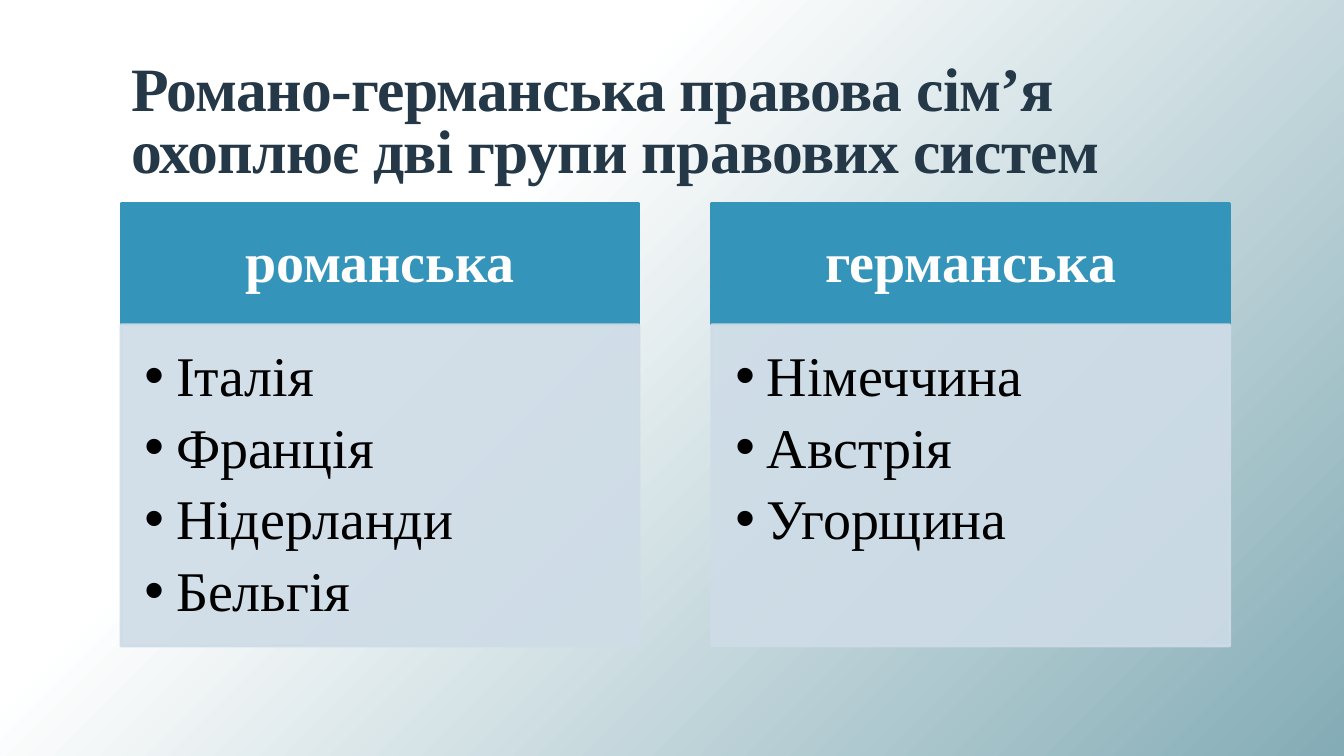
from lxml.etree import SubElement
from pptx import Presentation
from pptx.dml.color import RGBColor
from pptx.enum.text import MSO_ANCHOR, MSO_AUTO_SIZE, PP_ALIGN
from pptx.oxml.ns import qn
from pptx.util import Pt

WHITE = RGBColor(0xFF, 0xFF, 0xFF)
BLACK = RGBColor(0x00, 0x00, 0x00)
NAVY = RGBColor(0x25, 0x38, 0x48)
BLUE = RGBColor(0x34, 0x94, 0xBA)
PALE = RGBColor(0xCE, 0xDC, 0xE7)
TEAL = RGBColor(0x84, 0xAC, 0xB6)

LEFT, TOP, WIDTH, STEP = 86.4, 145.5, 370, 422
HEAD, BODY = 86.4, 229.6


def place(shape, box, pads, anchor):
    for name, value in zip(("left", "top", "width", "height"), box):
        setattr(shape, name, Pt(value))
    frame = shape.text_frame
    sides = ("margin_left", "margin_top", "margin_right", "margin_bottom")
    for name, value in zip(sides, pads):
        setattr(frame, name, Pt(value))
    frame.word_wrap = True
    frame.auto_size = MSO_AUTO_SIZE.NONE
    frame.vertical_anchor = anchor


def write(shape, lines, style, align, space, after):
    shape.text_frame.text = "\n".join(lines)
    for para in shape.text_frame.paragraphs:
        para.alignment = align
        para.line_spacing = space
        para.space_before = Pt(0)
        para.space_after = Pt(after)
        font = para.runs[0].font
        font.name = "Times New Roman"
        font.color.rgb = style["color"]
        for name in ("size", "bold"):
            setattr(font, name, style[name])


deck = Presentation()
deck.slide_width, deck.slide_height = Pt(960), Pt(540)
slide = deck.slides.add_slide(deck.slide_layouts.get_by_name("Comparison"))
slots = {slot.placeholder_format.idx: slot for slot in slide.placeholders}

# Background
back = slide.background.fill
back.gradient()
back.gradient_angle = 315
for stop, (spot, color) in zip(back.gradient_stops, ((0.33, WHITE), (1, TEAL))):
    stop.position = spot
    stop.color.rgb = color

# Title
title = slots[0]
place(title, (LEFT, 22.3, 792, 114.5), (7.2, 3.6, 7.2, 3.6), MSO_ANCHOR.BOTTOM)
write(title, ["Романо-германська правова сім’я охоплює дві групи правових систем"],
      {"size": Pt(44), "bold": True, "color": NAVY}, PP_ALIGN.LEFT, 0.85, 0)
title.text_frame.paragraphs[0].runs[0].font._element.set("spc", "-50")

# Two groups: a heading above a list of countries
groups = (
    ("романська", ["Італія", "Франція", "Нідерланди", "Бельгія"]),
    ("германська", ["Німеччина", "Австрія", "Угорщина"]),
)
for i, (name, lands) in enumerate(groups):
    left = LEFT + i * STEP
    head, body = slots[1 + 2 * i], slots[2 + 2 * i]
    place(head, (left, TOP, WIDTH, HEAD), (22.4, 12.8, 22.4, 12.8), MSO_ANCHOR.MIDDLE)
    write(head, [name], {"size": Pt(40), "bold": True, "color": WHITE},
          PP_ALIGN.CENTER, 0.9, 0)
    place(body, (left, TOP + HEAD, WIDTH, BODY), (16.8, 16.8, 22.4, 25.2), MSO_ANCHOR.TOP)
    write(body, lands, {"size": Pt(40), "bold": False, "color": BLACK},
          PP_ALIGN.LEFT, 0.9, 7.9)

    for box, color in ((head, BLUE), (body, PALE)):
        box.fill.solid()
        box.fill.fore_color.rgb = color
        box.line.color.rgb = color
        box.line.width = Pt(2)

    # Slightly clear panel
    for tint in body._element.spPr.iter(qn("a:srgbClr")):
        SubElement(tint, qn("a:alpha"), val="90000")

    # Bullets
    for para in body.text_frame.paragraphs:
        props = para._p.get_or_add_pPr()
        props.set("marL", str(Pt(22.5)))
        props.set("indent", str(-Pt(22.5)))
        SubElement(props, qn("a:buChar"), char="•")

deck.save("out.pptx")
